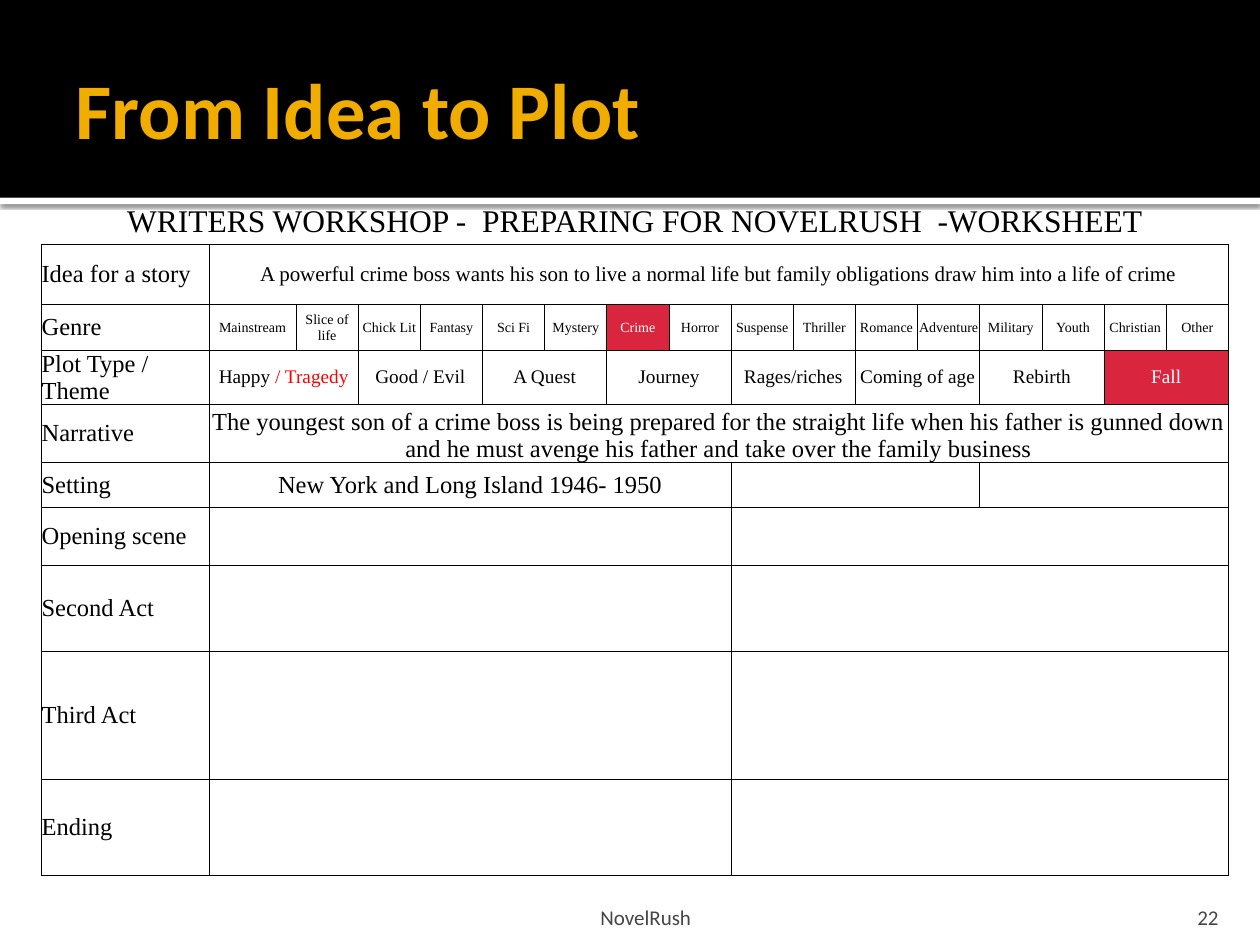
from dataclasses import dataclass

from lxml.etree import SubElement
from pptx import Presentation
from pptx.dml.color import RGBColor
from pptx.enum.shapes import MSO_SHAPE
from pptx.enum.text import MSO_ANCHOR, MSO_AUTO_SIZE, PP_ALIGN
from pptx.oxml import parse_xml
from pptx.oxml.ns import nsdecls, qn
from pptx.slide import Slide
from pptx.table import Table, _Cell
from pptx.text.text import TextFrame, _Paragraph
from pptx.util import Inches, Pt


@dataclass(frozen=True)
class Theme:
    heading_font: str = "Calibri"
    body_font: str = "Times New Roman"
    black: str = "000000"
    white: str = "FFFFFF"
    gold: str = "F0AD00"
    crimson: str = "D9253E"
    red: str = "FF0000"
    grey: str = "454545"
    title: int = 45
    heading: int = 18
    label: int = 14
    idea: int = 12
    plot: int = 11
    genre: int = 8
    footer: int = 12
    rule: float = 0.5


THEME = Theme()


@dataclass(frozen=True)
class Entry:
    text: str = ""
    span: int = 1
    size: int = THEME.label
    chosen: bool = False
    accent: str = ""
    align: PP_ALIGN = PP_ALIGN.CENTER
    anchor: MSO_ANCHOR = MSO_ANCHOR.MIDDLE


@dataclass(frozen=True)
class WorksheetRow:
    height: float
    entries: list[Entry]


@dataclass(frozen=True)
class Band:
    top: float
    height: float
    color: str
    shadow: bool


@dataclass(frozen=True)
class Footer:
    text: str
    left: float
    width: float
    side: float
    align: PP_ALIGN


def label(text: str) -> Entry:
    return Entry(text, align=PP_ALIGN.LEFT)


GENRES = ["Mainstream", "Slice of life", "Chick Lit", "Fantasy", "Sci Fi", "Mystery",
          "Crime", "Horror", "Suspense", "Thriller", "Romance", "Adventure",
          "Military", "Youth", "Christian", "Other"]
PLOTS = ["Good / Evil", "A Quest", "Journey", "Rages/riches", "Coming of age",
         "Rebirth", "Fall"]
IDEA = ("A powerful crime boss wants his son to live a normal life but family "
        "obligations draw him into a life of crime")
NARRATIVE = ("The youngest son of a crime boss is being prepared for the straight life "
             "when his father is gunned down and he must avenge his father and take "
             "over the family business")
SCENES = [("Opening scene", 0.46), ("Second Act", 0.68), ("Third Act", 1.02),
          ("Ending", 0.76)]

ROWS = [
    WorksheetRow(0.36, [Entry("WRITERS WORKSHOP -  PREPARING FOR NOVELRUSH  -WORKSHEET",
                              17, THEME.heading)]),
    WorksheetRow(0.48, [label("Idea for a story"), Entry(IDEA, 16, THEME.idea)]),
    WorksheetRow(0.36, [label("Genre")] + [
        Entry(name, size=THEME.genre, chosen=name == "Crime") for name in GENRES]),
    WorksheetRow(0.36, [label("Plot Type / Theme"),
                        Entry("Happy ", 2, THEME.plot, accent="/ Tragedy")] + [
        Entry(name, 2, THEME.plot, name == "Fall") for name in PLOTS]),
    WorksheetRow(0.46, [label("Narrative"),
                        Entry(NARRATIVE, 16, anchor=MSO_ANCHOR.BOTTOM)]),
    WorksheetRow(0.36, [label("Setting"), Entry("New York and Long Island 1946- 1950", 8),
                        Entry(span=4), Entry(span=4)]),
] + [WorksheetRow(height, [label(name), Entry(span=8), Entry(span=8)])
     for name, height in SCENES]

TABLE_WIDTH = 9.42
LEAD_COLUMNS = [1.33, 0.69]
COLUMNS = LEAD_COLUMNS + [(TABLE_WIDTH - sum(LEAD_COLUMNS)) / 15] * 15

BANDS = [Band(1.57, 0.05, THEME.white, True), Band(0, 1.57, THEME.black, False)]
FOOTERS = [Footer("22", 8.97, 0.8, 0.1, PP_ALIGN.RIGHT),
           Footer("NovelRush", 0.5, 9.25, 0.05, PP_ALIGN.CENTER)]


def apply_format(target: object, values: dict[str, object]) -> None:
    for name, value in values.items():
        setattr(target, name, value)


def add_span(para: _Paragraph, text: str, font: str, size: int, color: str,
             bold: bool = False) -> None:
    span = para.add_run()
    span.text = text
    apply_format(span.font, {"name": font, "size": Pt(size), "bold": bold})
    span.font.color.rgb = RGBColor.from_string(color)


def format_frame(frame: TextFrame, anchor: MSO_ANCHOR, left: float, right: float,
                 bottom: float) -> None:
    apply_format(frame, {
        "word_wrap": True, "auto_size": MSO_AUTO_SIZE.NONE, "vertical_anchor": anchor,
        "margin_left": Inches(left), "margin_right": Inches(right),
        "margin_top": Inches(0.05), "margin_bottom": Inches(bottom)})


def add_band(page: Slide, band: Band) -> None:
    shape = page.shapes.add_shape(MSO_SHAPE.RECTANGLE, 0, Inches(band.top),
                                  Inches(10), Inches(band.height))
    shape.shadow.inherit = False
    shape.fill.solid()
    shape.fill.fore_color.rgb = RGBColor.from_string(band.color)
    shape.line.fill.background()
    if band.shadow:
        effects = shape._element.spPr.find(qn("a:effectLst"))
        shadow = SubElement(effects, qn("a:outerShdw"), blurRad=str(Pt(2.5)),
                            dist=str(Pt(0.8)), dir="5400000", rotWithShape="0")
        color = SubElement(shadow, qn("a:srgbClr"), val=THEME.black)
        SubElement(color, qn("a:alpha"), val="60000")


def add_title(page: Slide, text: str) -> None:
    title = page.shapes.title
    apply_format(title, {"left": Inches(0.5), "top": Inches(0.17),
                         "width": Inches(9), "height": Inches(1.37)})
    format_frame(title.text_frame, MSO_ANCHOR.MIDDLE, 0.1, 0.05, 0.05)
    para = title.text_frame.paragraphs[0]
    para.alignment = PP_ALIGN.LEFT
    add_span(para, text, THEME.heading_font, THEME.title, THEME.gold, True)
    page.shapes._spTree.append(title._element)


def set_borders(cell: _Cell, ruled_sides: str) -> None:
    properties = cell._tc.get_or_add_tcPr()
    for index, side in enumerate("LRTB"):
        paint = (f'<a:solidFill><a:srgbClr val="{THEME.black}"/></a:solidFill>'
                 if side in ruled_sides else "<a:noFill/>")
        properties.insert(index, parse_xml(
            f'<a:ln{side} {nsdecls("a")} w="{Pt(THEME.rule)}">{paint}</a:ln{side}>'))


def fill_entry(cell: _Cell, entry: Entry) -> None:
    apply_format(cell, {"vertical_anchor": entry.anchor, "margin_left": 0,
                        "margin_right": 0, "margin_top": 0, "margin_bottom": 0})
    if entry.chosen:
        cell.fill.solid()
        cell.fill.fore_color.rgb = RGBColor.from_string(THEME.crimson)
    para = cell.text_frame.paragraphs[0]
    para.alignment = entry.align
    color = THEME.white if entry.chosen else THEME.black
    for text, shade in ((entry.text, color), (entry.accent, THEME.red)):
        if text:
            add_span(para, text, THEME.body_font, entry.size, shade)


def fill_row(table: Table, index: int, row: WorksheetRow) -> None:
    table.rows[index].height = Inches(row.height)
    for column in range(len(COLUMNS)):
        cell = table.cell(index, column)
        cell.fill.background()
        set_borders(cell, "LRTB" if index else "B")
    column = 0
    for entry in row.entries:
        cell = table.cell(index, column)
        if entry.span > 1:
            cell.merge(table.cell(index, column + entry.span - 1))
        fill_entry(cell, entry)
        column += entry.span


def add_worksheet(page: Slide) -> None:
    table = page.shapes.add_table(
        len(ROWS), len(COLUMNS), Inches(0.33), Inches(1.58), Inches(TABLE_WIDTH),
        Inches(sum(row.height for row in ROWS))).table
    apply_format(table, {"first_row": False, "horz_banding": False})
    for column, width in zip(table.columns, COLUMNS):
        column.width = Inches(width)
    for index, row in enumerate(ROWS):
        fill_row(table, index, row)


def add_footer(page: Slide, footer: Footer) -> None:
    box = page.shapes.add_textbox(Inches(footer.left), Inches(7.08),
                                  Inches(footer.width), Inches(0.3))
    format_frame(box.text_frame, MSO_ANCHOR.BOTTOM, footer.side, footer.side, 0)
    para = box.text_frame.paragraphs[0]
    para.alignment = footer.align
    add_span(para, footer.text, THEME.heading_font, THEME.footer, THEME.grey)


def main() -> None:
    deck = Presentation()
    apply_format(deck, {"slide_width": Inches(10), "slide_height": Inches(7.5)})
    page = deck.slides.add_slide(deck.slide_layouts.get_by_name("Title Only"))
    for band in BANDS:
        add_band(page, band)
    add_title(page, "From Idea to Plot")
    add_worksheet(page)
    for footer in FOOTERS:
        add_footer(page, footer)
    deck.save("out.pptx")


if __name__ == "__main__":
    main()
